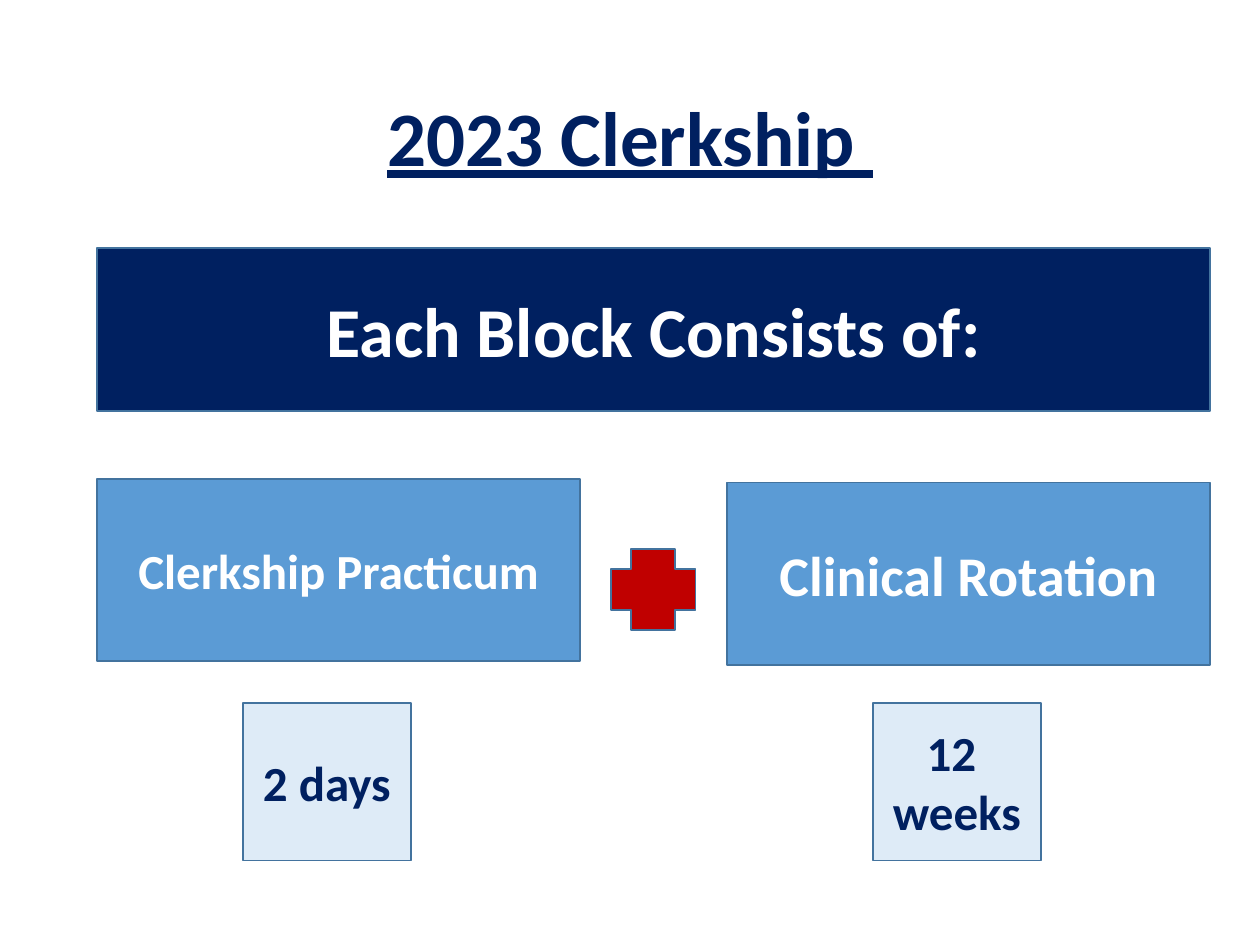
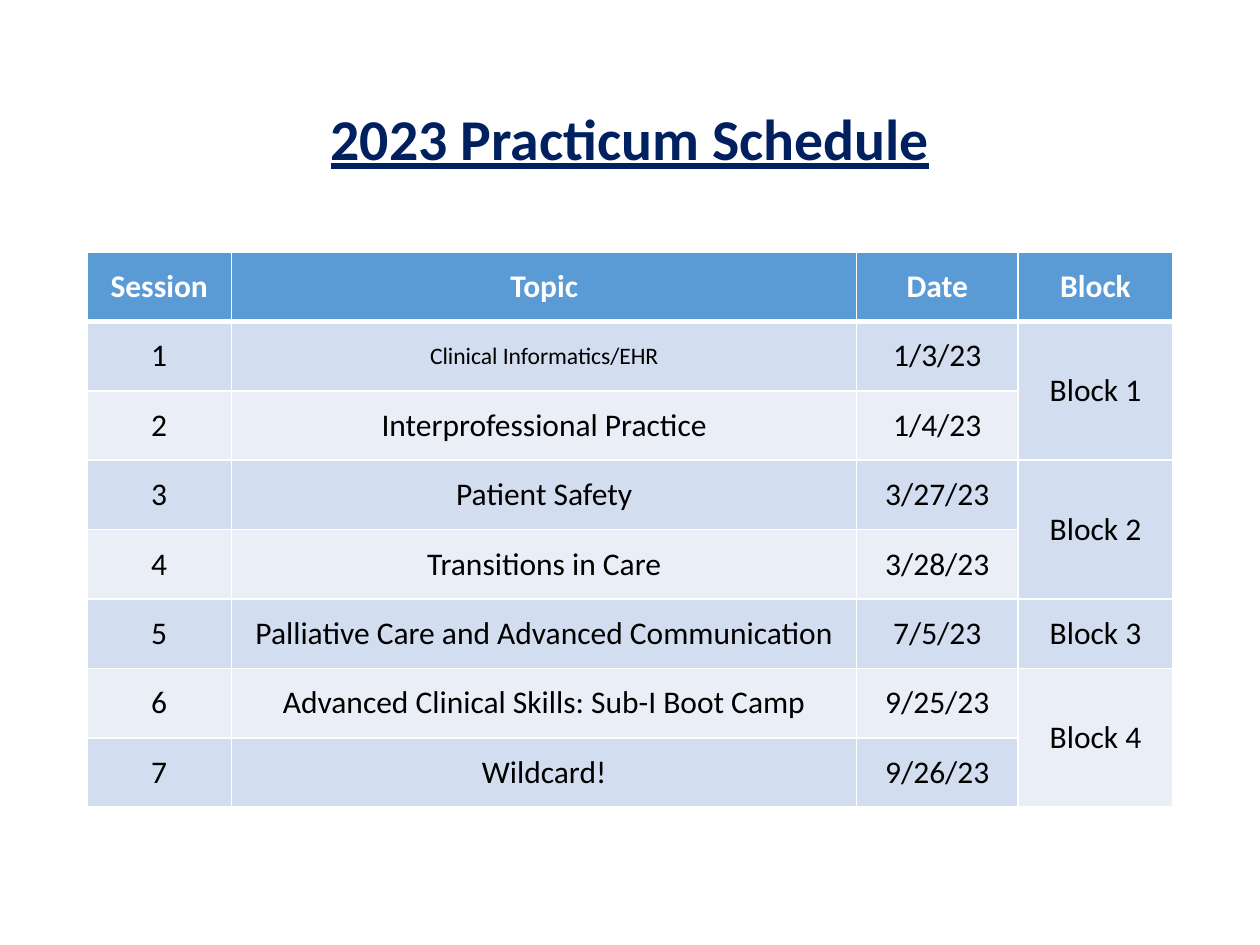
from pptx import Presentation
from pptx.dml.color import RGBColor
from pptx.enum import shapes as kinds, text as txt
from pptx.oxml import parse_xml
from pptx.oxml.ns import nsdecls
from pptx.util import Cm, Pt

NAVY = RGBColor(0x00, 0x20, 0x60)
BLUE = RGBColor(0x5B, 0x9B, 0xD5)
EDGE = RGBColor(0x43, 0x73, 0x9E)
PALE = RGBColor(0xDE, 0xEB, 0xF7)
RED = RGBColor(0xC0, 0x00, 0x00)
BAND = RGBColor(0xD2, 0xDE, 0xEF)
LIGHT = RGBColor(0xEA, 0xEF, 0xF7)
WHITE = RGBColor(0xFF, 0xFF, 0xFF)
BLACK = RGBColor(0x00, 0x00, 0x00)

FONT = "Calibri"
RECT = kinds.MSO_SHAPE.RECTANGLE
PLUS = kinds.MSO_SHAPE.CROSS
MIDDLE = txt.MSO_ANCHOR.MIDDLE

LEFT = 1.96
CARD = (9.73, 3.68)
TILE = (3.38, 3.18)
INSET = 2.94
PARTS = [
    (LEFT, 9.65, "Clerkship Practicum", 28, "2 days"),
    (14.66, 9.73, "Clinical Rotation", 32, "12 \nweeks"),
]

COLS = (2.92, 12.6, 3.25, 3.13)
ROW = 1.4
HEADS = ("Session", "Topic", "Date", "Block")
PLAN = [
    ("Clinical Informatics/EHR", "1/3/23"),
    ("Interprofessional Practice", "1/4/23"),
    ("Patient Safety", "3/27/23"),
    ("Transitions in Care", "3/28/23"),
    ("Palliative Care and Advanced Communication", "7/5/23"),
    ("Advanced Clinical Skills: Sub-I Boot Camp", "9/25/23"),
    ("Wildcard!", "9/26/23"),
]
BLOCKS = [(1, 2), (3, 4), (5, 5), (6, 7)]


def write(frame, words, size, color, **extra):
    frame.text = words
    style = {"name": FONT, "size": Pt(size), "bold": True, **extra}
    for para in frame.paragraphs:
        para.alignment = txt.PP_ALIGN.CENTER
        for run in para.runs:
            for key, value in style.items():
                setattr(run.font, key, value)
            run.font.color.rgb = color


def place(shape, left, top, width, height):
    spots = {"left": left, "top": top, "width": width, "height": height}
    for key, value in spots.items():
        setattr(shape, key, Cm(value))


def add_page(deck, words, size):
    slide = deck.slides.add_slide(deck.slide_layouts[5])
    title = slide.shapes.title
    place(title, 1.75, 1.01, 21.9, 3.68)
    frame = title.text_frame
    write(frame, words, size, NAVY, underline=True)
    form = {"auto_size": txt.MSO_AUTO_SIZE.NONE, "word_wrap": True,
            "vertical_anchor": MIDDLE}
    for key, value in form.items():
        setattr(frame, key, value)
    frame.paragraphs[0].line_spacing = 0.9
    return slide


def add_box(slide, spot, fill, words="", size=28, color=WHITE, kind=RECT):
    box = slide.shapes.add_shape(kind, *map(Cm, spot))
    box.shadow.inherit = False
    box.fill.solid()
    box.fill.fore_color.rgb = fill
    box.line.color.rgb = EDGE
    box.line.width = Pt(1)
    if words:
        box.text_frame.word_wrap = True
        box.text_frame.vertical_anchor = MIDDLE
        write(box.text_frame, words, size, color)


def add_edges(cell, base):
    props = cell._tc.get_or_add_tcPr()
    for side, width in (("L", 1), ("R", 1), ("T", 1), ("B", base)):
        props.append(parse_xml(
            f'<a:ln{side} {nsdecls("a")} w="{Pt(width)}"><a:solidFill>'
            f'<a:srgbClr val="{WHITE}"/></a:solidFill></a:ln{side}>'))


def fill_cell(cell, words, row, size=18):
    head = row == 0
    add_edges(cell, 3 if head else 1)
    cell.fill.solid()
    cell.fill.fore_color.rgb = BLUE if head else BAND if row % 2 else LIGHT
    cell.vertical_anchor = MIDDLE
    write(cell.text_frame, words, size, WHITE if head else BLACK, bold=head)


def add_plan(slide):
    count = len(PLAN) + 1
    spot = map(Cm, (1.75, 5.08, sum(COLS), ROW * count))
    table = slide.shapes.add_table(count, len(COLS), *spot).table
    for col, width in zip(table.columns, COLS):
        col.width = Cm(width)
    for line in table.rows:
        line.height = Cm(ROW)
    names = {first: f"Block {n}" for n, (first, _) in enumerate(BLOCKS, 1)}
    rows = [HEADS] + [(str(n), topic, date, names.get(n, ""))
                      for n, (topic, date) in enumerate(PLAN, 1)]
    for r, row in enumerate(rows):
        for c, words in enumerate(row):
            fill_cell(table.cell(r, c), words, r, 13.5 if (r, c) == (1, 1) else 18)
    for first, last in BLOCKS:
        if last > first:
            table.cell(first, 3).merge(table.cell(last, 3))


def add_parts(slide):
    add_box(slide, (LEFT, 5, 22.43, 3.28), NAVY, "Each Block Consists of:", 40)
    for left, top, name, size, span in PARTS:
        add_box(slide, (left, top, *CARD), BLUE, name, size)
        add_box(slide, (left + INSET, 14.17, *TILE), PALE, span, color=NAVY)
    add_box(slide, (12.32, 11.07, 1.7, 1.63), RED, kind=PLUS)


def main():
    deck = Presentation()
    deck.slide_width, deck.slide_height = Cm(25.4), Cm(19.05)
    add_parts(add_page(deck, "2023 Clerkship ", 44))
    add_plan(add_page(deck, "2023 Practicum Schedule", 33))
    deck.save("out.pptx")


if __name__ == "__main__":
    main()
